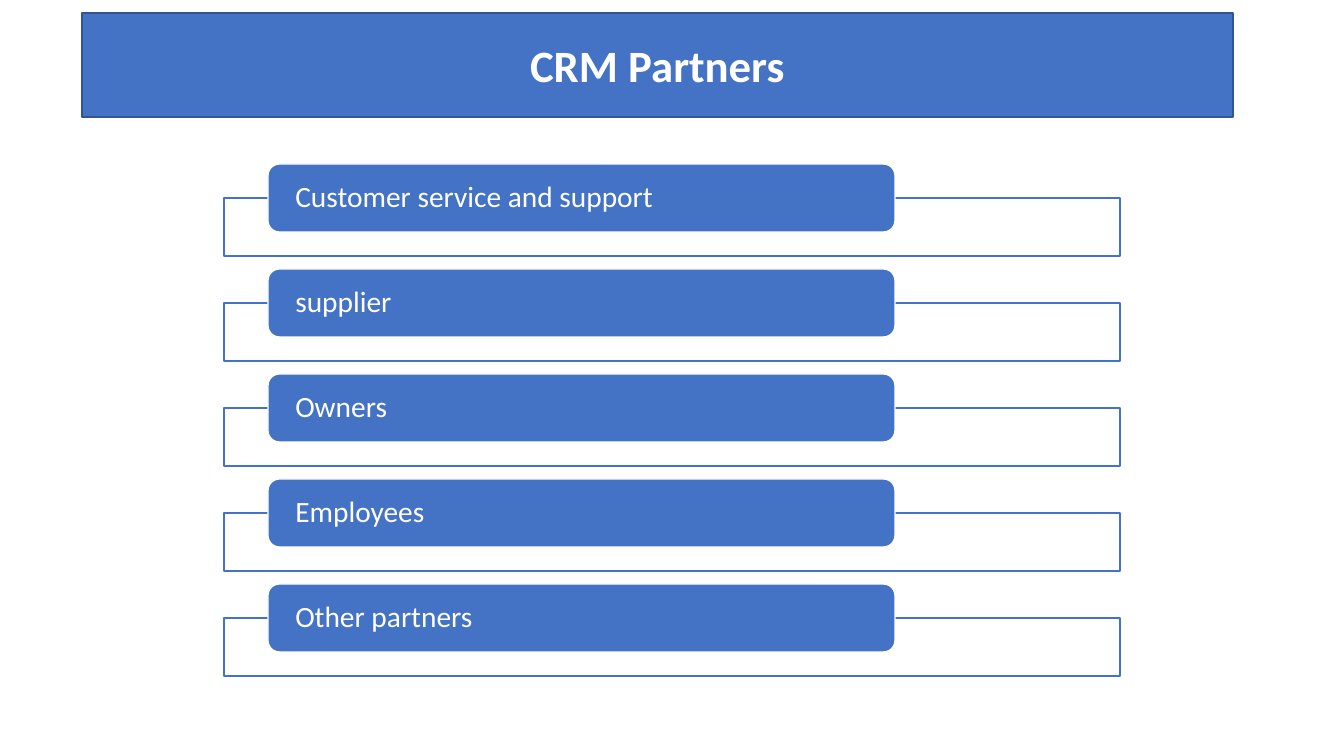
import pptx
import pptx.util
import pptx.dml.color
import pptx.enum.shapes
import pptx.enum.text

PIXELS_PER_INCH = 100.8
COLORS = {"blue": "4472C4", "navy": "325491", "white": "FFFFFF"}
FONT = "Calibri"
PARTNERS = [
    "Customer service and support",
    "supplier",
    "Owners",
    "Employees",
    "Other partners",
]
SHAPES = pptx.enum.shapes.MSO_SHAPE
ALIGN = pptx.enum.text.PP_ALIGN


def px(length):
    return pptx.util.Emu(round(length * 914400 / PIXELS_PER_INCH))


def color(name):
    return pptx.dml.color.RGBColor.from_string(COLORS[name])


def add_box(page, kind, box, fill, line):
    shape = page.shapes.add_shape(kind, *map(px, box))
    shape.shadow.inherit = False
    shape.fill.solid()
    shape.fill.fore_color.rgb = color(fill)
    shape.line.color.rgb = color(line)
    shape.line.width = pptx.util.Pt(1)
    return shape


def write_text(shape, text, size, align, bold=False):
    frame = shape.text_frame
    frame.text = text
    frame.word_wrap = True
    frame.vertical_anchor = pptx.enum.text.MSO_ANCHOR.MIDDLE
    para = frame.paragraphs[0]
    para.alignment = align
    font = para.runs[0].font
    font.name = FONT
    font.size = pptx.util.Pt(size)
    font.bold = bold
    font.color.rgb = color("white")
    return para


def add_title(page, box):
    banner = add_box(page, SHAPES.RECTANGLE, box, "blue", "navy")
    write_text(banner, "CRM Partners", 32, ALIGN.CENTER, bold=True)


def add_partner(page, box, name):
    left, top, width, height = box
    label_height = 68
    frame_top = label_height // 2
    frame_box = (left, top + frame_top, width, height - frame_top)
    add_box(page, SHAPES.RECTANGLE, frame_box, "white", "blue")

    label_box = (left + width // 20, top, width * 7 // 10, label_height)
    label = add_box(page, SHAPES.ROUNDED_RECTANGLE, label_box, "blue", "white")
    para = write_text(label, name, 21, ALIGN.LEFT)
    para.line_spacing = 0.9
    label.text_frame.margin_left = label.text_frame.margin_right = px(24)
    label.text_frame.margin_top = label.text_frame.margin_bottom = 0


def add_partner_list(page, box):
    left, top, width, height = box
    gap = 13
    row_height = (height + gap) // len(PARTNERS) - gap
    for index, name in enumerate(PARTNERS):
        row_top = top + index * (row_height + gap)
        add_partner(page, (left, row_top, width, row_height), name)


def main():
    deck = pptx.Presentation()
    deck.slide_width = px(1344)
    deck.slide_height = px(756)
    page = deck.slides.add_slide(deck.slide_layouts[6])
    add_partner_list(page, (224, 164, 896, 512))
    add_title(page, (82, 13, 1151, 104))
    deck.save("out.pptx")


if __name__ == "__main__":
    main()
